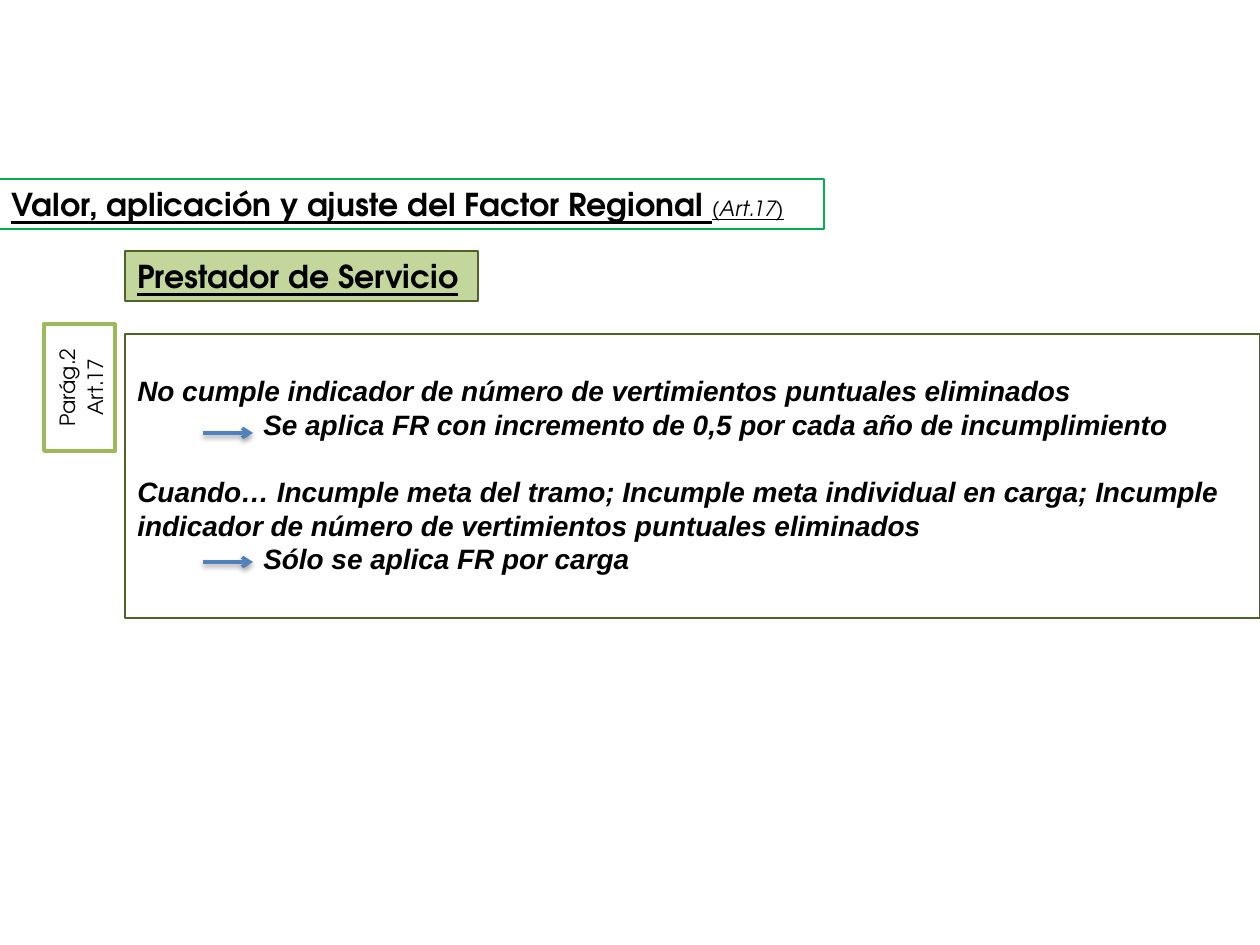
from dataclasses import dataclass

from lxml import etree
from pptx import Presentation
from pptx import util as u
from pptx.dml import color
from pptx.enum import shapes, text
from pptx.oxml import ns

COLOURS = {
    "black": "000000",
    "white": "FFFFFF",
    "blue": "4F81BD",
    "dark_green": "4F6228",
    "olive": "9BBB59",
    "pale_green": "C3D69B",
    "green": "00B050",
}
BODY_FONT = "Arial"
HEAD_FONT = "TeX Gyre Adventor"
SLIDE_WIDTH, SLIDE_HEIGHT = 1260, 945
TAB = 126


def px(length: int) -> int:
    return round(length * 914400 / 126)


def rgb(name: str) -> color.RGBColor:
    return color.RGBColor.from_string(COLOURS[name])


@dataclass(frozen=True)
class Span:
    words: str
    size: int
    font: str = HEAD_FONT
    bold: bool = False
    italic: bool = False
    underline: bool = False


@dataclass(frozen=True)
class Para:
    spans: tuple[Span, ...]
    align: text.PP_ALIGN = text.PP_ALIGN.LEFT
    indent: int = 0
    before: float = 0
    after: float = 0
    spacing: float | u.Pt = 1.0


@dataclass(frozen=True)
class Box:
    left: int
    top: int
    width: int
    height: int
    line: str
    paras: tuple[Para, ...]
    fill: str | None = None
    weight: float = 0.75
    rotation: int = 0
    anchor: text.MSO_ANCHOR = text.MSO_ANCHOR.TOP
    inset_top: int = 6


@dataclass(frozen=True)
class Arrow:
    left: int
    top: int
    length: int = 50


def body(words: str, indent: int = 0, before: float = 0) -> Para:
    span = Span(words, 16, BODY_FONT, bold=True, italic=True)
    return Para((span,), indent=indent, before=before, spacing=u.Pt(19.2))


def heading(words: str, *more: Span) -> Para:
    span = Span(words, 18, bold=True, underline=True)
    return Para((span, *more), text.PP_ALIGN.JUSTIFY)


RULES = Box(125, 334, 1135, 284, "dark_green", (
    body("No cumple indicador de número de vertimientos puntuales eliminados"),
    body("Se aplica FR con incremento de 0,5 por cada año de incumplimiento", TAB),
    body("Cuando… Incumple meta del tramo; Incumple meta individual en carga; "
         "Incumple indicador de número de vertimientos puntuales eliminados",
         before=19.2),
    body("Sólo se aplica FR por carga", TAB),
), inset_top=40)

ARTICLE = Box(16, 352, 127, 71, "olive", (
    Para((Span("Parág.2 Art.17", 12),), text.PP_ALIGN.CENTER, after=6, spacing=1.14),
), fill="white", weight=2, rotation=270, anchor=text.MSO_ANCHOR.MIDDLE)

TITLE = Box(-1, 179, 825, 50, "green", (
    heading("Valor, aplicación y ajuste del Factor Regional ",
            Span("(Art.17)", 12, italic=True, underline=True)),
))

PROVIDER = Box(125, 251, 353, 50, "dark_green",
               (heading("Prestador de Servicio"),), fill="pale_green")

ARROWS = (Arrow(203, 433), Arrow(203, 562))


def draw_para(target, para: Para) -> None:
    target.alignment = para.align
    target.line_spacing = para.spacing
    target.space_before = u.Pt(para.before)
    target.space_after = u.Pt(para.after)
    if para.indent:
        properties = target._p.get_or_add_pPr()
        properties.set("marL", str(px(para.indent)))
        properties.set("indent", "0")
    for span in para.spans:
        run = target.add_run()
        run.text = span.words
        run.font.name = span.font
        run.font.size = u.Pt(span.size)
        run.font.bold = span.bold
        run.font.italic = span.italic
        run.font.underline = span.underline
        run.font.color.rgb = rgb("black")


def draw_box(page, box: Box) -> None:
    shape = page.shapes.add_shape(
        shapes.MSO_SHAPE.RECTANGLE,
        px(box.left), px(box.top), px(box.width), px(box.height))
    shape.shadow.inherit = False
    shape.rotation = box.rotation
    if box.fill:
        shape.fill.solid()
        shape.fill.fore_color.rgb = rgb(box.fill)
    else:
        shape.fill.background()
    shape.line.color.rgb = rgb(box.line)
    shape.line.width = u.Pt(box.weight)
    frame = shape.text_frame
    frame.word_wrap = True
    frame.vertical_anchor = box.anchor
    frame.margin_top = px(box.inset_top)
    for index, para in enumerate(box.paras):
        draw_para(frame.add_paragraph() if index else frame.paragraphs[0], para)


def draw_arrow(page, arrow: Arrow) -> None:
    connector = page.shapes.add_connector(
        shapes.MSO_CONNECTOR.STRAIGHT, px(arrow.left), px(arrow.top),
        px(arrow.left + arrow.length), px(arrow.top))
    connector.line.color.rgb = rgb("blue")
    connector.line.width = u.Pt(2)
    etree.SubElement(connector.line._get_or_add_ln(), ns.qn("a:tailEnd"), type="arrow")
    effects = etree.SubElement(connector._element.spPr, ns.qn("a:effectLst"))
    shadow = etree.SubElement(
        effects, ns.qn("a:outerShdw"), blurRad="40000", dist="20000",
        dir="5400000", rotWithShape="0")
    tint = etree.SubElement(shadow, ns.qn("a:srgbClr"), val=COLOURS["black"])
    etree.SubElement(tint, ns.qn("a:alpha"), val="38000")


def main() -> None:
    deck = Presentation()
    deck.slide_width, deck.slide_height = px(SLIDE_WIDTH), px(SLIDE_HEIGHT)
    page = deck.slides.add_slide(deck.slide_layouts[6])
    for box in (RULES, ARTICLE):
        draw_box(page, box)
    for arrow in ARROWS:
        draw_arrow(page, arrow)
    for box in (TITLE, PROVIDER):
        draw_box(page, box)
    deck.save("out.pptx")


if __name__ == "__main__":
    main()
